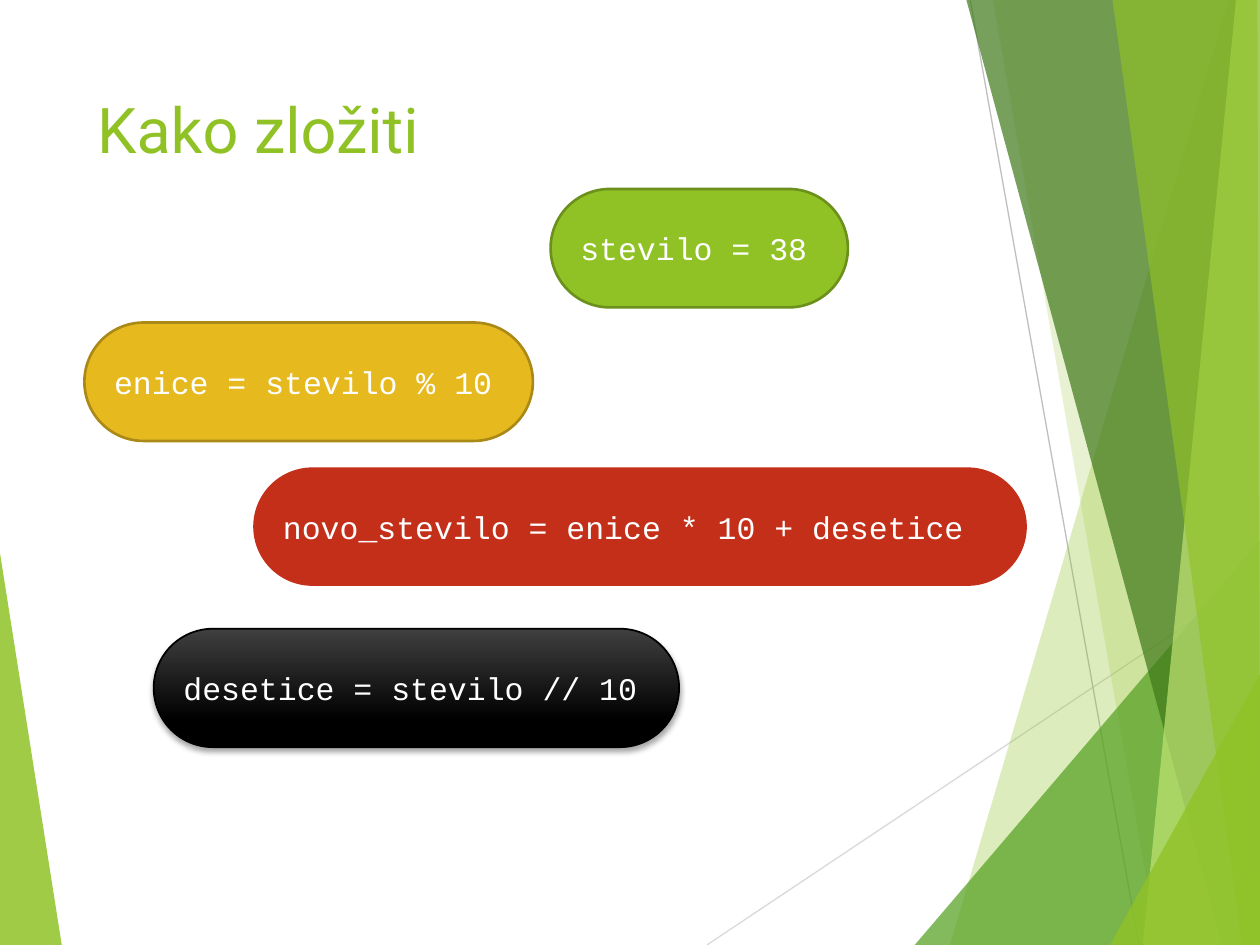
"""Build the slide "Kako zložiti": code pills on a green faceted backdrop."""

from dataclasses import dataclass
from typing import Optional

from lxml import etree
from pptx import Presentation
from pptx import util as u
from pptx.dml.color import RGBColor
from pptx.enum import shapes, text
from pptx.oxml import ns

COLORS = {
    "green": "90C226",
    "mid_green": "54A021",
    "dark_green": "3F7819",
    "light_green": "C0E474",
    "green_edge": "6B901C",
    "yellow": "E6B91E",
    "yellow_edge": "AA8916",
    "red": "C42F1A",
    "charcoal": "3F3F3F",
    "black": "000000",
    "white": "FFFFFF",
    "pale_gray": "D9D9D9",
    "gray": "BFBFBF",
}
WIDTH, HEIGHT = 10, 7.5
PILL_HEIGHT = 0.94


@dataclass
class Facet:
    points: list[tuple[float, float]]
    color: str
    opacity: int


@dataclass
class Ray:
    start: tuple[float, float]
    end: tuple[float, float]
    color: str


@dataclass
class Pill:
    code: str
    left: float
    top: float
    width: float
    fill: str
    edge: Optional[str] = None
    edge_width: float = 1.5
    fade_to: Optional[str] = None


RAYS = [
    Ray((5.61, HEIGHT), (WIDTH, 4.57), "pale_gray"),
    Ray((7.7, 0), (9.04, HEIGHT), "gray"),
]
LEFT_FACET = Facet([(0, 4.39), (0.49, HEIGHT), (0, HEIGHT)], "green", 85)
RIGHT_FACETS = [
    Facet([(9.75, 0), (7.54, HEIGHT), (WIDTH, HEIGHT), (WIDTH, 0)], "green", 30),
    Facet([(7.88, 0), (9.19, HEIGHT), (WIDTH, HEIGHT), (WIDTH, 0)], "green", 20),
    Facet([(7.26, HEIGHT), (WIDTH, 4.29), (WIDTH, HEIGHT)], "mid_green", 72),
    Facet([(7.67, 0), (9.7, HEIGHT), (WIDTH, HEIGHT), (WIDTH, 0)], "dark_green", 70),
    Facet([(9.81, 0), (9.07, HEIGHT), (WIDTH, HEIGHT), (WIDTH, 0)], "light_green", 70),
    Facet([(8.83, 0), (9.86, HEIGHT), (WIDTH, HEIGHT), (9.98, 0)], "green", 65),
    Facet([(8.81, HEIGHT), (WIDTH, 5.35), (WIDTH, HEIGHT)], "green", 80),
]
PILLS = [
    Pill("stevilo = 38", 4.37, 1.5, 2.36, "green", "green_edge"),
    Pill("desetice = stevilo // 10", 1.22, 4.99, 4.17, "charcoal", "black", 1, "black"),
    Pill("enice = stevilo % 10", 0.67, 2.56, 3.56, "yellow", "yellow_edge"),
    Pill("novo_stevilo = enice * 10 + desetice", 2.01, 3.71, 6.14, "red"),
]


def rgb(name: str) -> RGBColor:
    """Return the named colour."""
    return RGBColor.from_string(COLORS[name])


def set_opacity(color_element, percent: int) -> None:
    """Make a colour element partly transparent."""
    etree.SubElement(color_element, ns.qn("a:alpha"), val=str(percent * 1000))


def draw_facet(slide, facet: Facet) -> None:
    """Draw one translucent polygon of the backdrop."""
    points = [(u.Inches(x), u.Inches(y)) for x, y in facet.points]
    builder = slide.shapes.build_freeform(*points[0])
    builder.add_line_segments(points[1:], close=True)
    shape = builder.convert_to_shape()
    shape.shadow.inherit = False
    shape.fill.solid()
    shape.fill.fore_color.rgb = rgb(facet.color)
    shape.line.fill.background()
    set_opacity(shape._element.spPr.find(".//" + ns.qn("a:srgbClr")), facet.opacity)


def draw_ray(slide, ray: Ray) -> None:
    """Draw one thin line of the backdrop."""
    ends = [u.Inches(value) for value in (*ray.start, *ray.end)]
    connector = slide.shapes.add_connector(shapes.MSO_CONNECTOR.STRAIGHT, *ends)
    connector.line.color.rgb = rgb(ray.color)
    connector.line.width = u.Pt(0.75)
    etree.SubElement(connector._element.spPr, ns.qn("a:effectLst"))


def add_drop_shadow(shape) -> None:
    """Give a shape a soft shadow straight below it."""
    effects = shape._element.spPr.find(ns.qn("a:effectLst"))
    shadow = etree.SubElement(
        effects, ns.qn("a:outerShdw"), blurRad=str(u.Pt(3)), dist=str(u.Pt(2)),
        dir="5400000", rotWithShape="0",
    )
    color = etree.SubElement(shadow, ns.qn("a:srgbClr"), val=COLORS["black"])
    set_opacity(color, 35)


def draw_pill(slide, pill: Pill) -> None:
    """Draw one rounded box holding a line of code."""
    box = [u.Inches(value) for value in (pill.left, pill.top, pill.width, PILL_HEIGHT)]
    shape = slide.shapes.add_shape(shapes.MSO_SHAPE.ROUNDED_RECTANGLE, *box)
    shape.adjustments[0] = 0.5
    shape.shadow.inherit = False
    if pill.fade_to:
        shape.fill.gradient()
        shape.fill.gradient_angle = 270
        first, last = shape.fill.gradient_stops
        first.color.rgb, first.position = rgb(pill.fill), 0
        last.color.rgb, last.position = rgb(pill.fade_to), 0.78
        add_drop_shadow(shape)
    else:
        shape.fill.solid()
        shape.fill.fore_color.rgb = rgb(pill.fill)
    if pill.edge:
        shape.line.color.rgb = rgb(pill.edge)
        shape.line.width = u.Pt(pill.edge_width)
    else:
        shape.line.fill.background()
    write(shape, pill.code, "Courier New", 18, "white", text.MSO_ANCHOR.MIDDLE)


def write(shape, content: str, font: str, size: int, color: str, anchor) -> None:
    """Set the left-aligned text of a shape and format it."""
    frame = shape.text_frame
    frame.text = content
    frame.word_wrap = True
    frame.auto_size = text.MSO_AUTO_SIZE.NONE
    frame.vertical_anchor = anchor
    paragraph = frame.paragraphs[0]
    paragraph.alignment = text.PP_ALIGN.LEFT
    run = paragraph.runs[0]
    run.font.name = font
    run.font.size = u.Pt(size)
    run.font.color.rgb = rgb(color)


def place_title(slide) -> None:
    """Position the title in front of the backdrop and write it."""
    title = slide.shapes.title
    title.left, title.top = u.Inches(0.67), u.Inches(0.67)
    title.width, title.height = u.Inches(6.94), u.Inches(1.44)
    write(title, "Kako zložiti", "Roboto", 36, "green", text.MSO_ANCHOR.TOP)
    slide.shapes._spTree.append(title._element)


def main() -> None:
    """Build and save the presentation."""
    presentation = Presentation()
    presentation.slide_width = u.Inches(WIDTH)
    presentation.slide_height = u.Inches(HEIGHT)
    slide = presentation.slides.add_slide(presentation.slide_layouts[5])
    draw_facet(slide, LEFT_FACET)
    for ray in RAYS:
        draw_ray(slide, ray)
    for facet in RIGHT_FACETS:
        draw_facet(slide, facet)
    place_title(slide)
    for pill in PILLS:
        draw_pill(slide, pill)
    presentation.save("out.pptx")


if __name__ == "__main__":
    main()
